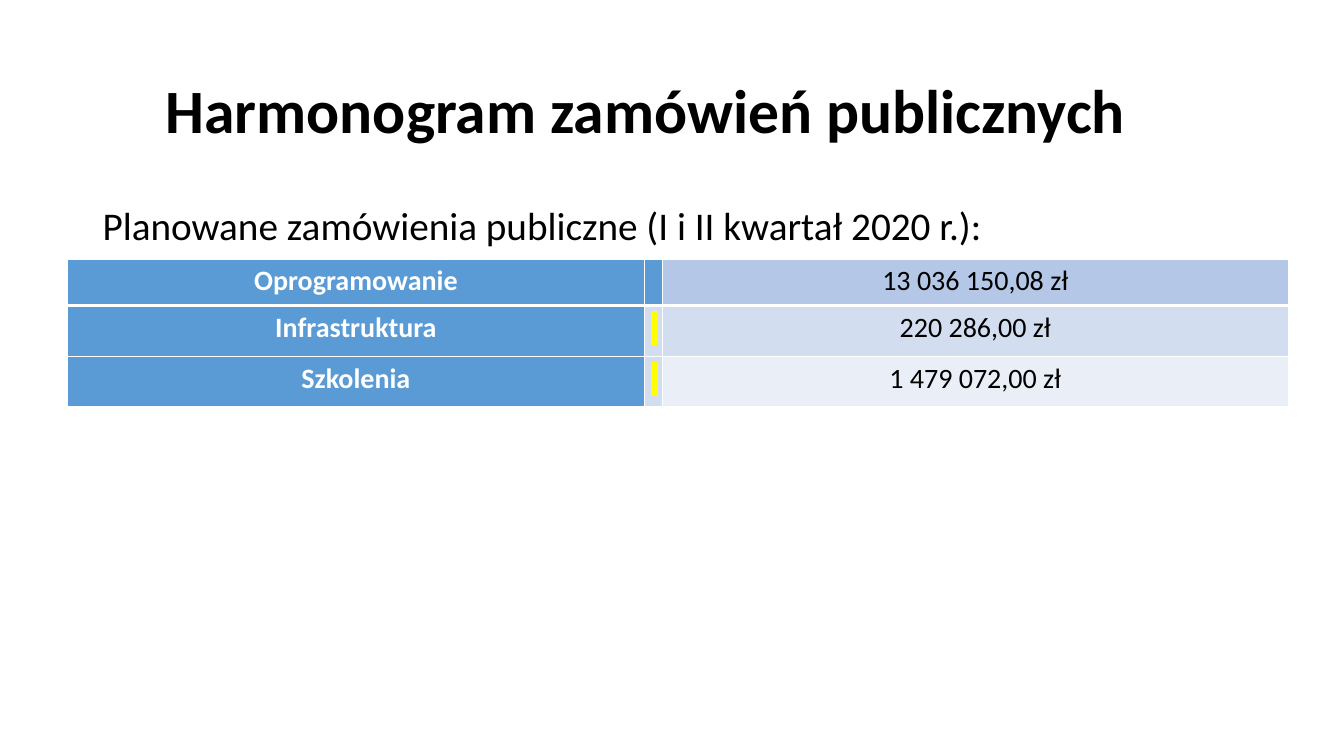
from dataclasses import dataclass

from lxml.etree import SubElement
from pptx import Presentation
from pptx.dml.color import RGBColor
from pptx.enum.text import MSO_ANCHOR, PP_ALIGN
from pptx.oxml.ns import qn
from pptx.util import Inches, Pt


@dataclass(frozen=True)
class Theme:
    """Colours, font and type sizes of the slide."""

    font: str = "Calibri"
    title_size: int = 44
    body_size: int = 28
    table_size: int = 20
    text: str = "000000"
    white: str = "FFFFFF"
    label: str = "5B9BD5"
    first_amount: str = "B4C7E7"
    band: str = "D2DEEF"
    light_band: str = "EAEFF7"
    marker: str = "FFFF00"


THEME = Theme()
MARKER = chr(160)
ORDERS = [
    ("Oprogramowanie", "", "13 036 150,08 zł"),
    ("Infrastruktura", MARKER, "220 286,00 zł"),
    ("Szkolenia", MARKER, "1 479 072,00 zł"),
]
FILLS = [
    (THEME.label, THEME.label, THEME.first_amount),
    (THEME.label, THEME.band, THEME.band),
    (THEME.label, THEME.band, THEME.light_band),
]
COLUMN_WIDTHS = (5.72, 0.18, 6.21)
ROW_HEIGHTS = (0.46, 0.51, 0.49)


def write_text(frame, text, *, size, color=THEME.text, bold=False,
               align=PP_ALIGN.LEFT, spacing=0.9, before=0, highlight=None):
    """Write one formatted paragraph into a text frame."""
    paragraph = frame.paragraphs[0]
    paragraph.alignment = align
    paragraph.line_spacing = spacing
    paragraph.space_before = Pt(before)
    paragraph.font.size = Pt(size)
    if not text:
        return
    run = paragraph.add_run()
    run.text = text
    if highlight:
        properties = run.font._element
        mark = SubElement(properties, qn("a:highlight"))
        SubElement(mark, qn("a:srgbClr"), val=highlight)
    run.font.size = Pt(size)
    run.font.bold = bold
    run.font.name = THEME.font
    run.font.color.rgb = RGBColor.from_string(color)


def add_text_box(slide, box, text, *, anchor=MSO_ANCHOR.TOP, right_inset=0.1, **text_format):
    """Add a wrapping text box in the given box."""
    frame = slide.shapes.add_textbox(*map(Inches, box)).text_frame
    frame.word_wrap = True
    frame.vertical_anchor = anchor
    frame.margin_right = Inches(right_inset)
    write_text(frame, text, **text_format)


def set_borders(cell, *, top, bottom):
    """Give a cell white borders, with the top and bottom widths in points."""
    properties = cell._tc.get_or_add_tcPr()
    for side, width in (("L", 1), ("R", 1), ("T", top), ("B", bottom)):
        line = SubElement(properties, qn(f"a:ln{side}"), w=str(Pt(width)))
        fill = SubElement(line, qn("a:solidFill"))
        SubElement(fill, qn("a:srgbClr"), val=THEME.white)


def add_orders_table(slide, left, top):
    """Add the table of planned orders with its corner at left and top."""
    table = slide.shapes.add_table(
        len(ORDERS), len(COLUMN_WIDTHS), Inches(left), Inches(top),
        Inches(sum(COLUMN_WIDTHS)), Inches(sum(ROW_HEIGHTS))).table
    table.first_row = table.horz_banding = False
    for column, width in zip(table.columns, COLUMN_WIDTHS):
        column.width = Inches(width)
    for row, height in zip(table.rows, ROW_HEIGHTS):
        row.height = Inches(height)
    for row_index, (texts, fills) in enumerate(zip(ORDERS, FILLS)):
        for column_index, (text, fill) in enumerate(zip(texts, fills)):
            cell = table.cell(row_index, column_index)
            is_label = column_index == 0
            is_marker = column_index == 1
            set_borders(cell, top=3 if row_index == 1 else 1,
                        bottom=3 if row_index == 0 else 1)
            cell.fill.solid()
            cell.fill.fore_color.rgb = RGBColor.from_string(fill)
            cell.margin_left = cell.margin_right = Inches(0.07)
            cell.margin_top = cell.margin_bottom = 0
            write_text(cell.text_frame, text, size=THEME.table_size, spacing=1.15,
                       bold=is_label, color=THEME.white if is_label else THEME.text,
                       align=PP_ALIGN.LEFT if is_marker else PP_ALIGN.CENTER,
                       highlight=THEME.marker if is_marker else None)


def build_schedule_slide(presentation):
    """Build the public procurement schedule slide."""
    slide = presentation.slides.add_slide(presentation.slide_layouts[6])
    add_text_box(slide, (0.92, 0.4, 11.5, 1.45), "Harmonogram zamówień publicznych",
                 anchor=MSO_ANCHOR.MIDDLE, right_inset=0.62, size=THEME.title_size,
                 bold=True, align=PP_ALIGN.CENTER)
    add_text_box(slide, (0.92, 2, 11.5, 4.76),
                 "Planowane zamówienia publiczne (I i II kwartał 2020 r.):",
                 size=THEME.body_size, before=10)
    add_orders_table(slide, 0.67, 2.57)


def main():
    """Create and save the presentation."""
    presentation = Presentation()
    presentation.slide_width = Inches(13.33)
    presentation.slide_height = Inches(7.5)
    build_schedule_slide(presentation)
    presentation.save("out.pptx")


if __name__ == "__main__":
    main()
